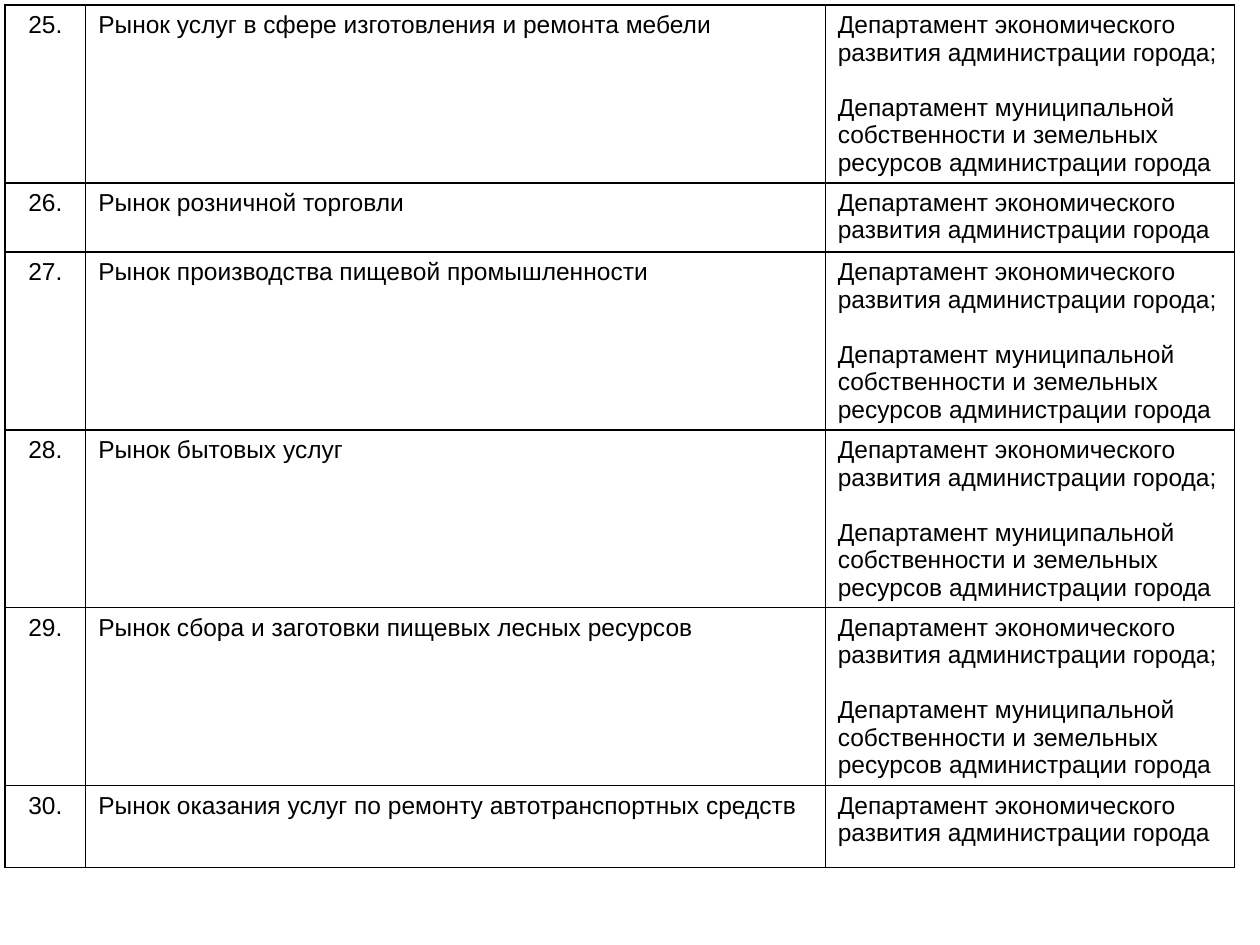
from lxml import etree
from pptx import Presentation
from pptx.dml.color import RGBColor
from pptx.enum.text import PP_ALIGN
from pptx.oxml.ns import qn
from pptx.util import Inches, Pt

CENTER, LEFT = PP_ALIGN.CENTER, PP_ALIGN.LEFT
ECON = "Департамент экономического развития администрации города"
LAND = "Департамент муниципальной собственности и земельных ресурсов администрации города"
FIRST = 25
MARKETS = [
    ("Рынок услуг в сфере изготовления и ремонта мебели", [ECON + ";", LAND]),
    ("Рынок розничной торговли", [ECON]),
    ("Рынок производства пищевой промышленности", [ECON + ";", LAND]),
    ("Рынок бытовых услуг", [ECON + ";", LAND]),
    ("Рынок сбора и заготовки пищевых лесных ресурсов", [ECON + ";", LAND]),
    ("Рынок оказания услуг по ремонту автотранспортных средств", [ECON]),
]
COLS = [0.64, 5.87, 3.25]
ALIGNS = [CENTER, LEFT, LEFT]
TALL, SHORT, LAST = 1.41, 0.55, 0.65
EDGE = 0.04
GAP = Pt(15.7)
INK, PAPER = "000000", "FFFFFF"
FONT = {"name": "Arial", "size": Pt(14), "bold": False}


def color(text):
    """Turn a hex string into a colour."""
    return RGBColor.from_string(text)


def border(cell):
    """Draw a thin line on all four sides of a cell."""
    props = cell._tc.get_or_add_tcPr()
    for spot, side in enumerate(("a:lnL", "a:lnR", "a:lnT", "a:lnB")):
        line = etree.Element(qn(side), w=str(Pt(1)))
        fill = etree.SubElement(line, qn("a:solidFill"))
        etree.SubElement(fill, qn("a:srgbClr"), val=INK)
        props.insert(spot, line)


def write(cell, parts, align):
    """Fill a cell with paragraphs set one line apart."""
    cell.fill.solid()
    cell.fill.fore_color.rgb = color(PAPER)
    border(cell)
    frame = cell.text_frame
    for i, part in enumerate(parts):
        para = frame.add_paragraph() if i else frame.paragraphs[0]
        para.alignment = align
        if i:
            para.space_before = GAP
        run = para.add_run()
        run.text = part
        for key, value in FONT.items():
            setattr(run.font, key, value)
        run.font.color.rgb = color(INK)


def main():
    """Build the slide with the table of markets."""
    deck = Presentation()
    deck.slide_width, deck.slide_height = Inches(10), Inches(7.5)
    slide = deck.slides.add_slide(deck.slide_layouts[6])
    rows = [TALL if len(offices) > 1 else SHORT for _, offices in MARKETS]
    rows[-1] = LAST
    box = [Inches(n) for n in (EDGE, EDGE, sum(COLS), sum(rows))]
    table = slide.shapes.add_table(len(rows), len(COLS), *box).table
    table.first_row = table.horz_banding = False
    for col, width in zip(table.columns, COLS):
        col.width = Inches(width)
    for i, (market, offices) in enumerate(MARKETS):
        table.rows[i].height = Inches(rows[i])
        texts = [[f"{FIRST + i}."], [market], offices]
        for cell, parts, align in zip(table.rows[i].cells, texts, ALIGNS):
            write(cell, parts, align)
    deck.save("out.pptx")


if __name__ == "__main__":
    main()
